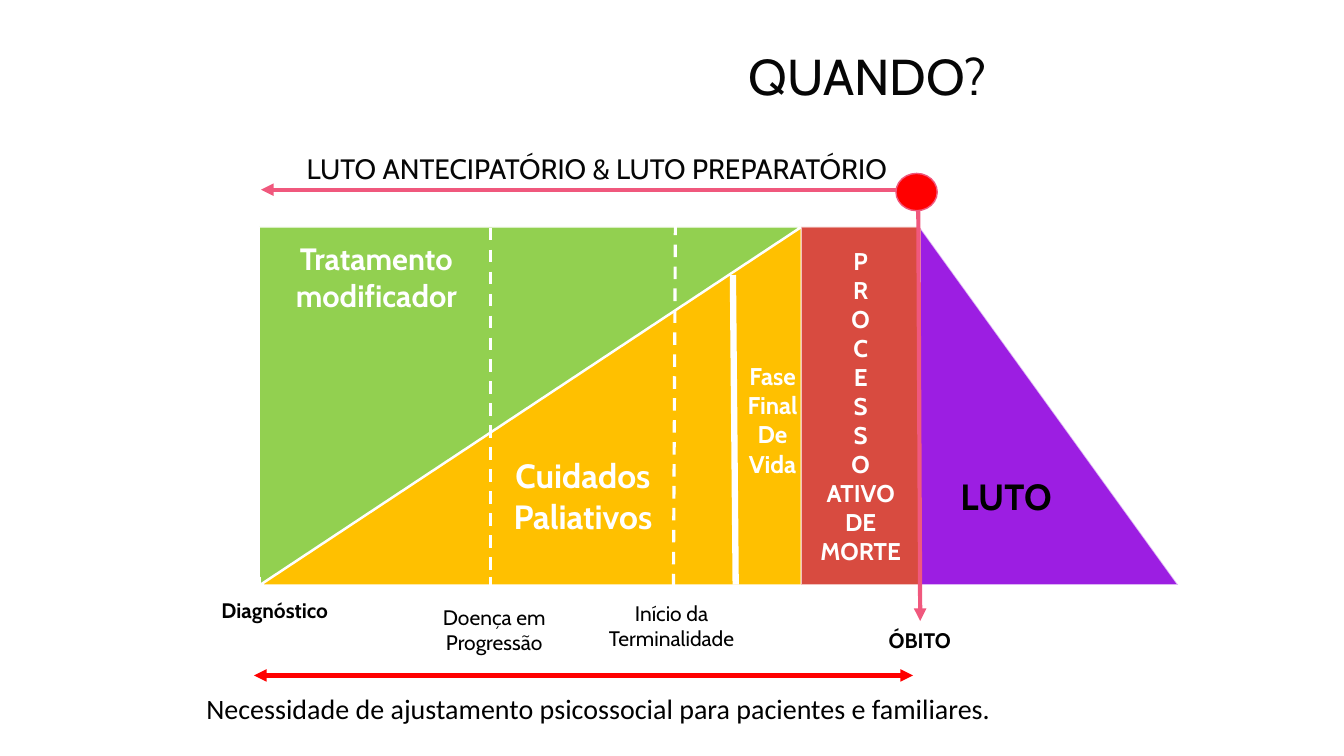
import pptx
import pptx.util
import pptx.dml.color
import pptx.enum.dml
import pptx.enum.shapes
import pptx.enum.text
import pptx.oxml
import pptx.oxml.ns
from lxml import etree

Cm, Pt = pptx.util.Cm, pptx.util.Pt
RGBColor = pptx.dml.color.RGBColor
Preset = pptx.enum.shapes.MSO_SHAPE
Align = pptx.enum.text.PP_ALIGN
Anchor = pptx.enum.text.MSO_ANCHOR
DASH = pptx.enum.dml.MSO_LINE.DASH

WHITE = RGBColor(0xFF, 0xFF, 0xFF)
BLACK = RGBColor(0x00, 0x00, 0x00)
INK = RGBColor(0x06, 0x06, 0x06)
YELLOW = RGBColor(0xFF, 0xC0, 0x00)
GREEN = RGBColor(0x92, 0xD0, 0x50)
BRICK = RGBColor(0xD8, 0x4B, 0x40)
PURPLE = RGBColor(0x9C, 0x1E, 0xE2)
PINK = RGBColor(0xF0, 0x58, 0x7D)
RED = RGBColor(0xFF, 0x00, 0x00)

BAND_TOP, BAND_HEIGHT = 5.72, 9.02
DIAGNOSIS, PROGRESSION, TERMINALITY, DEATH = 6.53, 12.37, 16.97, 23.19


def write(shape, lines, size=15, color=BLACK, bold=False, font="Cabin",
          align=Align.CENTER, anchor=Anchor.TOP, spacing=None, wrap=True):
    """Fill a shape with one paragraph per line."""
    frame = shape.text_frame
    frame.word_wrap = wrap
    frame.vertical_anchor = anchor
    for index, line in enumerate(lines):
        para = frame.paragraphs[0] if index == 0 else frame.add_paragraph()
        para.alignment = align
        para.line_spacing = spacing
        span = para.add_run()
        span.text = line
        span.font.name = font
        span.font.size = Pt(size)
        span.font.bold = bold
        span.font.color.rgb = color


def add_label(page, box, lines, **text_format):
    label = page.shapes.add_textbox(*map(Cm, box))
    write(label, lines, **text_format)


def add_area(page, preset, box, fill, outline=WHITE, opacity=100):
    area = page.shapes.add_shape(preset, *map(Cm, box))
    area.shadow.inherit = False
    area.fill.solid()
    area.fill.fore_color.rgb = fill
    area.line.color.rgb = outline
    area.line.width = Pt(1)
    if opacity < 100:
        color = area.line._ln.find(".//" + pptx.oxml.ns.qn("a:srgbClr"))
        etree.SubElement(color, pptx.oxml.ns.qn("a:alpha"), val=str(opacity * 1000))
    return area


def add_turned_triangle(page, left, fill, rotation):
    """Place a quarter-turned right triangle by its visible left edge."""
    width = 13.64
    shift = (width - BAND_HEIGHT) / 2
    box = (left + shift, BAND_TOP - shift, BAND_HEIGHT, width)
    add_area(page, Preset.RIGHT_TRIANGLE, box, fill).rotation = rotation


def add_line(page, ends, color=WHITE, width=2.0, dash=None, arrows=False):
    line = page.shapes.add_connector(
        pptx.enum.shapes.MSO_CONNECTOR.STRAIGHT, *map(Cm, ends))
    line.line.color.rgb = color
    line.line.width = Pt(width)
    if dash:
        line.line.dash_style = dash
    if arrows:
        for end in ("a:headEnd", "a:tailEnd"):
            etree.SubElement(line.line._ln, pptx.oxml.ns.qn(end), type="triangle")
    etree.SubElement(line._element.spPr, pptx.oxml.ns.qn("a:effectLst"))


def add_title(page):
    title = page.shapes.title
    title.left, title.top, title.width, title.height = map(Cm, (17.5, 1, 8.74, 2))
    write(title, ["QUANDO?"], size=36, color=INK, anchor=Anchor.MIDDLE, spacing=0.9)


def add_phases(page):
    add_turned_triangle(page, 6.58, YELLOW, 270)
    add_turned_triangle(page, DIAGNOSIS, GREEN, 90)
    dying = add_area(page, Preset.RECTANGLE, (20.19, BAND_TOP, 3, BAND_HEIGHT),
                     BRICK, opacity=66)
    write(dying, [*"PROCESSO", "ATIVO", "DE", "MORTE"], size=17.3, color=WHITE,
          bold=True, anchor=Anchor.MIDDLE)
    grief = add_area(page, Preset.RIGHT_TRIANGLE, (DEATH, 5.74, 6.5, 9), PURPLE,
                     opacity=66)
    write(grief, ["LUTO"], size=26, bold=True, anchor=Anchor.MIDDLE)


def add_dividers(page):
    add_line(page, (17.02, 5.61, TERMINALITY, 15.04), width=2.25, dash=DASH)
    add_line(page, (PROGRESSION, 5.74, PROGRESSION, 15.11), width=2.25, dash=DASH)
    for milestone in (DIAGNOSIS, PROGRESSION, TERMINALITY, DEATH):
        add_line(page, (milestone, 14.53, milestone, 15.11))
    add_line(page, (18.47, 6.93, 18.54, 14.73), width=4.5)


def add_labels(page):
    add_label(page, (6.73, 5.92, 5.51, 2.13), ["Tratamento modificador"],
              size=22, color=WHITE, bold=True)
    add_label(page, (12.01, 11.35, 5.36, 2.31), ["Cuidados Paliativos"],
              size=24, color=WHITE, bold=True)
    add_label(page, (18.38, 8.99, 2.18, 3.23), ["Fase", "Final", "De", "Vida"],
              size=17.3, color=WHITE, bold=True, wrap=False)
    add_label(page, (4.7, 14.94, 4.45, 0.89), ["Diagnóstico"], bold=True)
    add_label(page, (10.36, 15.11, 4.19, 1.55), ["Doença em Progressão"])
    add_label(page, (14.83, 15.01, 4.19, 1.55), ["Início da", "Terminalidade"])
    add_label(page, (21.16, 15.7, 4.04, 0.89), ["ÓBITO"], bold=True)
    add_label(page, (6.71, 3.78, 16.66, 1.02),
              ["LUTO ANTECIPATÓRIO & LUTO PREPARATÓRIO"],
              size=20, color=INK, anchor=Anchor.MIDDLE, spacing=0.9)
    add_label(page, (4.95, 17.3, 22.2, 1.7),
              ["Necessidade de ajustamento psicossocial para pacientes e familiares."],
              size=20, font="Calibri", align=Align.JUSTIFY)


def add_arrows(page):
    add_line(page, (6.58, 4.78, 23.16, 4.78), color=PINK, width=3, arrows=True)
    add_line(page, (23.14, 4.72, DEATH, 15.65), color=PINK, width=3, arrows=True)
    add_area(page, Preset.OVAL, (22.58, 4.37, 1.04, 0.94), RED, outline=PINK)
    add_line(page, (6.4, 17.02, 23.01, 17.02), color=RED, width=3, arrows=True)


def main():
    deck = pptx.Presentation()
    deck.slide_width, deck.slide_height = Cm(33.87), Cm(19.05)
    page = deck.slides.add_slide(deck.slide_layouts.get_by_name("Title Only"))
    add_title(page)
    add_phases(page)
    add_dividers(page)
    add_labels(page)
    add_arrows(page)
    deck.save("out.pptx")


if __name__ == "__main__":
    main()
